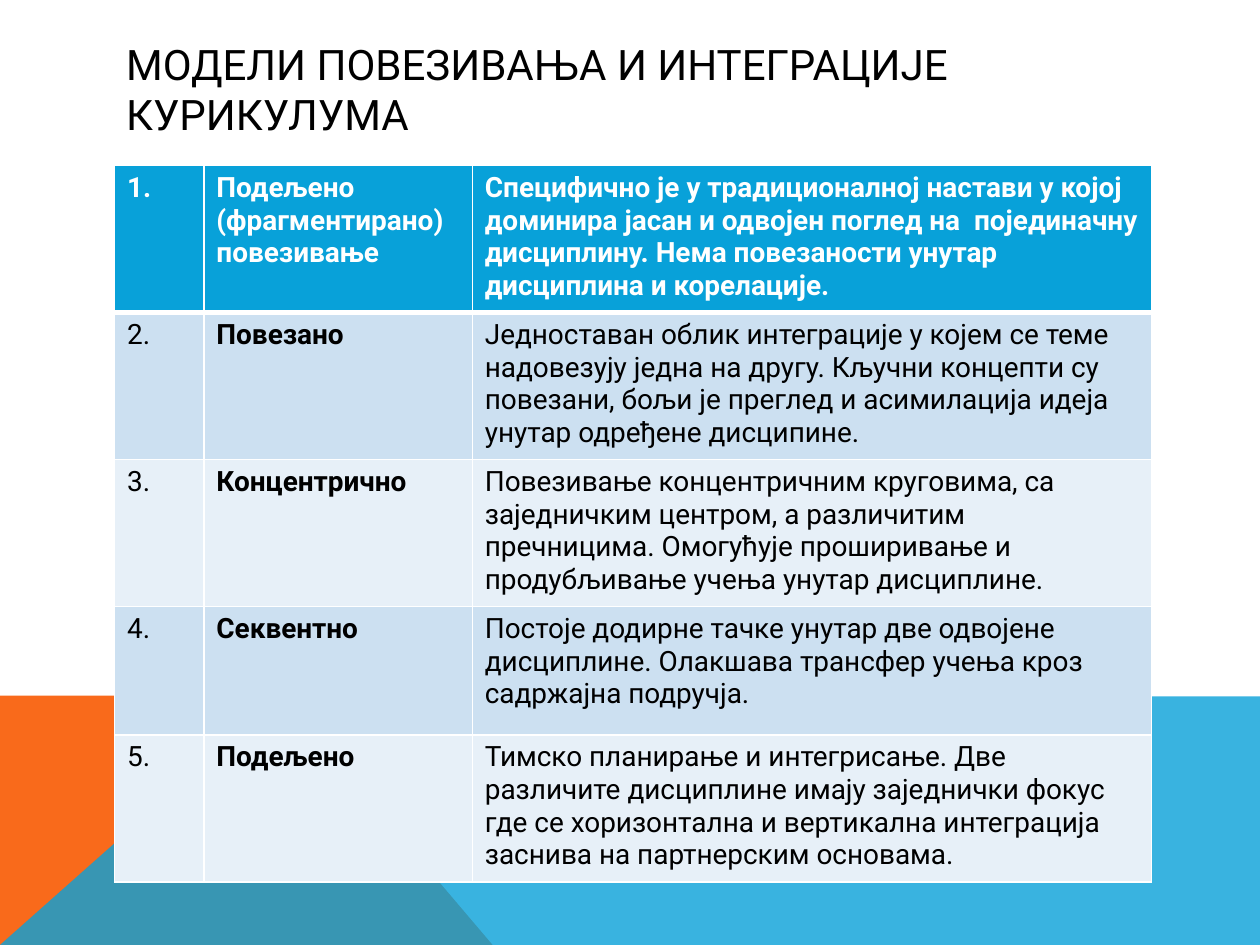
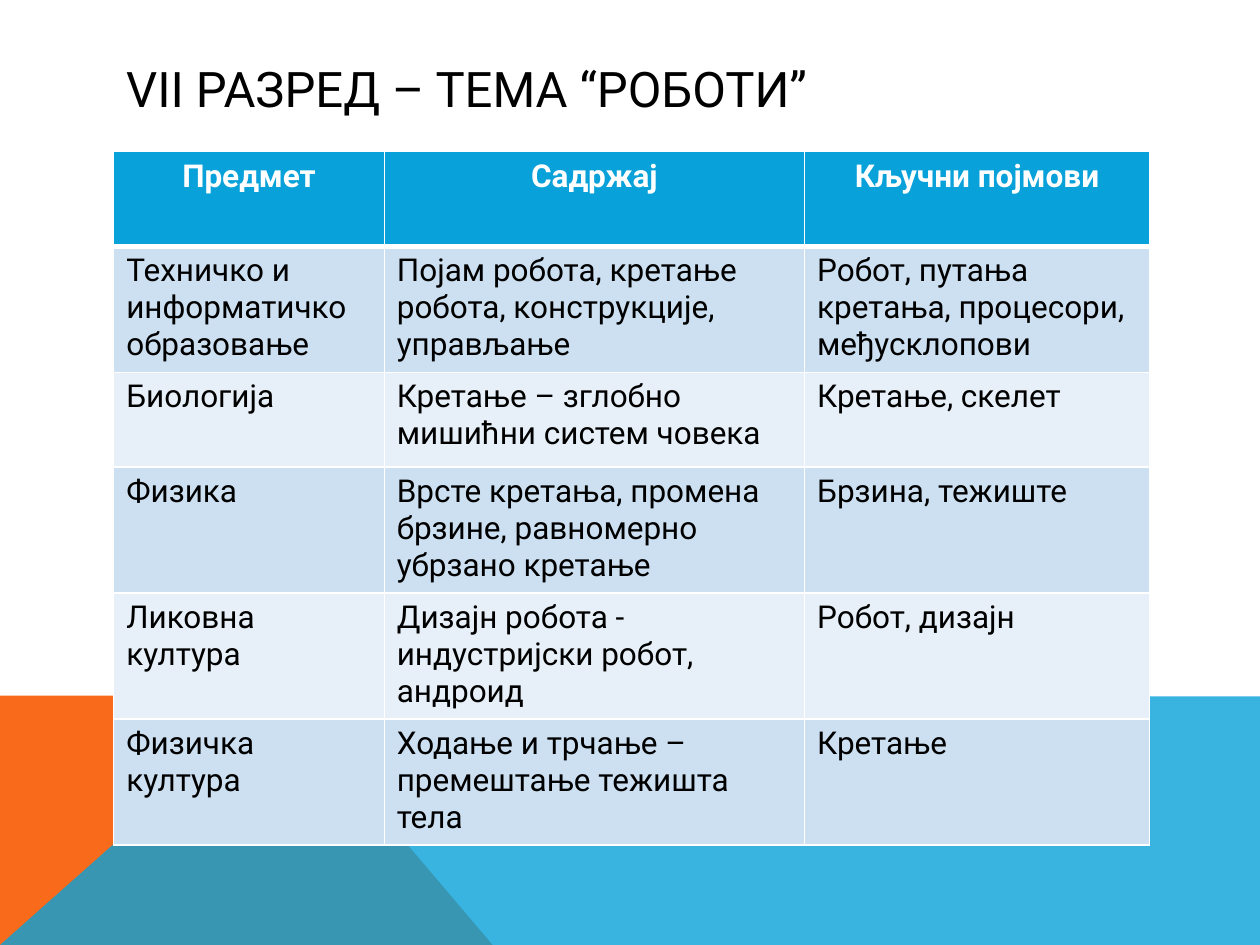
from dataclasses import dataclass

from lxml.etree import SubElement
from pptx import Presentation
from pptx.dml.color import RGBColor
from pptx.enum.text import MSO_ANCHOR, PP_ALIGN
from pptx.oxml.ns import qn
from pptx.slide import Slide
from pptx.table import _Cell
from pptx.util import Pt

FONT = "Roboto"
WHITE, BLACK = "FFFFFF", "000000"
BLUE, ORANGE = "08A1D9", "F96A1B"
STRIPES = ("CCE0F1", "E7F0F8")
WIDTH, HEIGHT = 720, 540
THIN, THICK = 1, 3


@dataclass
class Band:
    points: list[tuple[float, float]]
    color: str
    alpha: int = 100


@dataclass
class Grid:
    left: float
    top: float
    widths: list[float]
    height: float
    size: int
    rows: list[list[str]]
    center: bool = False
    strong: int | None = None  # body column set in bold


@dataclass
class Page:
    title: str
    size: int
    grid: Grid


BANDS = [
    Band([(0, 540), (0, 397.5), (160.5, 397.5), (281.5, 540)], ORANGE),
    Band([(0, 540), (160.5, 397.5), (720, 398), (720, 540)], BLUE, 80),
]

MODELS = Grid(
    65.5, 94.5, [51, 153.4, 388], 73.44, 16,
    [
        ["1.", "Подељено (фрагментирано) повезивање",
         "Специфично је у традиционалној настави у којој доминира јасан и "
         "одвојен поглед на  појединачну дисциплину. Нема повезаности унутар "
         "дисциплина и корелације."],
        ["2.", "Повезано",
         "Једноставан облик интеграције у којем се теме надовезују једна на "
         "другу. Кључни концепти су повезани, бољи је преглед и асимилација "
         "идеја унутар одређене дисципине."],
        ["3.", "Концентрично",
         "Повезивање концентричним круговима, са заједничким центром, а "
         "различитим пречницима. Омогућује проширивање и продубљивање учења "
         "унутар дисциплине."],
        ["4.", "Секвентно",
         "Постоје додирне тачке унутар две одвојене дисциплине. Олакшава "
         "трансфер учења кроз садржајна подручја."],
        ["5.", "Подељено",
         "Тимско планирање и интегрисање. Две различите дисциплине имају "
         "заједнички фокус где се хоризонтална и вертикална интеграција "
         "заснива на партнерским основама."],
    ],
    strong=1,
)

ROBOTS = Grid(
    65, 86.7, [154.6, 240.2, 197.2], 54, 18,
    [
        ["Предмет", "Садржај", "Кључни појмови"],
        ["Техничко и информатичко образовање",
         "Појам робота, кретање робота, конструкције, управљање",
         "Робот, путања кретања, процесори, међусклопови"],
        ["Биологија", "Кретање – зглобно мишићни систем човека",
         "Кретање, скелет"],
        ["Физика", "Врсте кретања, промена брзине, равномерно убрзано кретање",
         "Брзина, тежиште"],
        ["Ликовна култура", "Дизајн робота - индустријски робот, андроид",
         "Робот, дизајн"],
        ["Физичка култура", "Ходање и трчање – премештање тежишта тела",
         "Кретање"],
    ],
    center=True,
)

PAGES = [
    Page("МОДЕЛИ ПОВЕЗИВАЊА И ИНТЕГРАЦИЈЕ КУРИКУЛУМА", 24, MODELS),
    Page("VII РАЗРЕД – ТЕМА “РОБОТИ”", 28, ROBOTS),
]


def rgb(color: str) -> RGBColor:
    return RGBColor.from_string(color)


def write(frame, text: str, size: int, color: str, bold: bool = False) -> None:
    frame.text = text
    font = frame.paragraphs[0].runs[0].font
    font.name, font.size, font.bold = FONT, Pt(size), bold
    font.color.rgb = rgb(color)


def add_band(slide: Slide, band: Band) -> None:
    points = [(Pt(x), Pt(y)) for x, y in band.points]
    build = slide.shapes.build_freeform(*points[0])
    build.add_line_segments(points[1:], close=True)
    shape = build.convert_to_shape()
    shape.shadow.inherit = False
    shape.line.fill.background()
    shape.fill.solid()
    shape.fill.fore_color.rgb = rgb(band.color)
    if band.alpha < 100:
        tint = shape.fill._xPr.find(f".//{qn('a:srgbClr')}")
        SubElement(tint, qn("a:alpha"), val=str(band.alpha * 1000))


def add_title(slide: Slide, text: str, size: int) -> None:
    box = slide.shapes.add_textbox(Pt(65), Pt(29), Pt(592), Pt(43))
    frame = box.text_frame
    frame.word_wrap = True
    frame.vertical_anchor = MSO_ANCHOR.MIDDLE
    write(frame, text, size, BLACK)


def add_edges(cell: _Cell, top: int, bottom: int) -> None:
    """Draw white cell borders; call before the fill, which must follow them."""
    props = cell._tc.get_or_add_tcPr()
    for side, width in zip("LRTB", (THIN, THIN, top, bottom)):
        line = SubElement(props, qn(f"a:ln{side}"), w=str(Pt(width)))
        fill = SubElement(line, qn("a:solidFill"))
        SubElement(fill, qn("a:srgbClr"), val=WHITE)


def add_grid(slide: Slide, grid: Grid) -> None:
    count = len(grid.rows)
    table = slide.shapes.add_table(
        count, len(grid.widths), Pt(grid.left), Pt(grid.top),
        Pt(sum(grid.widths)), Pt(grid.height * count)).table
    for col, width in zip(table.columns, grid.widths):
        col.width = Pt(width)
    for r, texts in enumerate(grid.rows):
        table.rows[r].height = Pt(grid.height)
        head = r == 0
        for c, text in enumerate(texts):
            cell = table.cell(r, c)
            add_edges(cell, THICK if r == 1 else THIN, THICK if head else THIN)
            cell.fill.solid()
            cell.fill.fore_color.rgb = rgb(BLUE if head else STRIPES[(r - 1) % 2])
            write(cell.text_frame, text, grid.size, WHITE if head else BLACK,
                  head or c == grid.strong)
            if head and grid.center:
                cell.text_frame.paragraphs[0].alignment = PP_ALIGN.CENTER


def main() -> None:
    deck = Presentation()
    deck.slide_width, deck.slide_height = Pt(WIDTH), Pt(HEIGHT)
    for page in PAGES:
        slide = deck.slides.add_slide(deck.slide_layouts[6])
        for band in BANDS:
            add_band(slide, band)
        add_title(slide, page.title, page.size)
        add_grid(slide, page.grid)
    deck.save("out.pptx")


if __name__ == "__main__":
    main()
